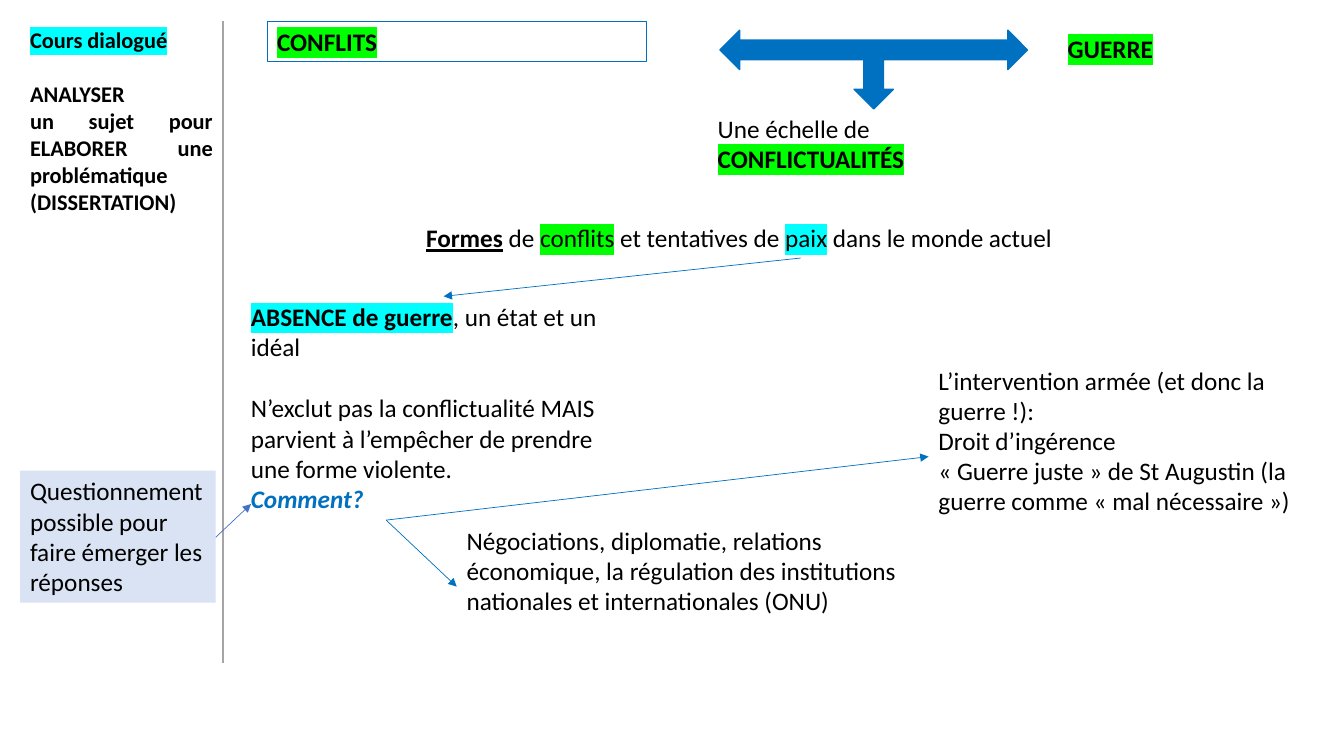
from lxml import etree
from pptx import Presentation
from pptx.dml.color import RGBColor
from pptx.enum.shapes import MSO_CONNECTOR, MSO_SHAPE
from pptx.enum.text import MSO_ANCHOR, PP_ALIGN as ALIGN
from pptx.oxml.ns import qn
from pptx.util import Emu, Pt

PX = 9144  # 100 px to the inch
COLORS = {
    "black": "000000", "blue": "0070C0", "royal": "4472C4", "gray": "A5A5A5",
    "pale": "DAE3F3", "green": "00FF00", "cyan": "00FFFF",
}


def px(*lengths):
    return [Emu(n * PX) for n in lengths]


def rgb(name):
    return RGBColor.from_string(COLORS[name])


def add_run(p, text, size=18, color="black", bold=False, italic=False,
            underline=False, mark=None):
    """Add a run; mark names its highlight colour."""
    r = p.add_run()
    r.text = text
    font = r.font
    font.size, font.bold, font.italic = Pt(size), bold, italic
    font.underline = underline
    font.color.rgb = rgb(color)
    if mark:
        highlight = etree.SubElement(r._r.get_or_add_rPr(), qn("a:highlight"))
        etree.SubElement(highlight, qn("a:srgbClr"), val=COLORS[mark])
    font.name = "Calibri"


def add_text(s, box, paragraphs, align=ALIGN.LEFT, fill=None, line=None,
             gaps=None, **base):
    """Write paragraphs of (text, format) runs; gaps maps index to space before."""
    if fill or line:
        sp = add_shape(s, MSO_SHAPE.RECTANGLE, box, fill, line, 0.75)
    else:
        sp = s.shapes.add_textbox(*px(*box))
    tf = sp.text_frame
    tf.word_wrap = True
    tf.vertical_anchor = MSO_ANCHOR.TOP
    for i, runs in enumerate(paragraphs):
        p = tf.paragraphs[0] if i == 0 else tf.add_paragraph()
        p.alignment = align
        if gaps and i in gaps:
            p.space_before = Pt(gaps[i])
        for text, style in runs:
            add_run(p, text, **{**base, **style})


def add_shape(s, kind, box, fill=None, line=None, width=1):
    sp = s.shapes.add_shape(kind, *px(*box))
    sp.shadow.inherit = False
    if fill:
        sp.fill.solid()
        sp.fill.fore_color.rgb = rgb(fill)
    else:
        sp.fill.background()
    if line:
        sp.line.color.rgb = rgb(line)
        sp.line.width = Pt(width)
    else:
        sp.line.fill.background()
    return sp


def add_line(s, start, end, color="blue", width=0.5, arrow=True):
    line = s.shapes.add_connector(MSO_CONNECTOR.STRAIGHT, *px(*start, *end))
    line.line.color.rgb = rgb(color)
    line.line.width = Pt(width)
    sp_pr = line._element.spPr
    if arrow:
        etree.SubElement(sp_pr.find(qn("a:ln")), qn("a:tailEnd"), type="triangle")
    etree.SubElement(sp_pr, qn("a:effectLst"))


def add_sidebar(s, x, y, w, h):
    add_text(s, (x, y, w, 199), [
        [("Cours dialogué", {"mark": "cyan"})],
        [("ANALYSER", {})],
        [("un sujet pour ELABORER une problématique", {})],
        [("(DISSERTATION)", {})],
    ], align=ALIGN.JUSTIFY, gaps={1: 19.5}, size=16, bold=True)
    add_line(s, (x + w, y), (x + w, y + h), "gray", 1, arrow=False)
    add_text(s, (x, y + 446, 194, 131), [
        [("Questionnement possible pour faire émerger les réponses", {})],
    ], fill="pale")
    add_line(s, (x + 194, y + 512), (x + 229, y + 479), "royal")


def add_conflict_scale(s, x, y, w):
    """Conflict on the left, war on the right, the scale between them."""
    key = {"bold": True, "mark": "green"}
    add_text(s, (x, y, 376, 40), [[("CONFLITS", key)]], line="blue")
    add_text(s, (x + w - 182, y + 7, 182, 40), [[("GUERRE", key)]])
    arrow = add_shape(s, MSO_SHAPE.LEFT_RIGHT_UP_ARROW,
                      (x + 449, y + 9, 305, 78), "blue", "blue")
    arrow.rotation = 180
    add_text(s, (x + 437, y + 86, 258, 71), [
        [("Une échelle de ", {}), ("CONFLICTUALITÉS", key)],
    ])


def add_peace_map(s, x, y):
    """The subject, the meaning of peace, and the two ways to reach it."""
    add_text(s, (x + 104, y, 780, 40), [[
        ("Formes", {"bold": True, "underline": True}),
        (" de ", {}),
        ("conflits", {"mark": "green"}),
        (" et tentatives de ", {}),
        ("paix", {"mark": "cyan"}),
        (" dans le monde actuel", {}),
    ]], align=ALIGN.CENTER)
    add_text(s, (x, y + 78, 402, 222), [
        [("ABSENCE de guerre", {"bold": True, "mark": "cyan"}),
         (", un état et un idéal", {})],
        [("N’exclut pas la conflictualité MAIS parvient à l’empêcher de "
          "prendre une forme violente.", {})],
        [("Comment?", {"color": "blue", "bold": True, "italic": True})],
    ], gaps={1: 22})
    add_text(s, (x + 214, y + 300, 461, 131), [
        [("Négociations, diplomatie, relations économique, la régulation des "
          "institutions nationales et internationales (ONU)", {})],
    ])
    add_text(s, (x + 682, y + 141, 373, 192), [
        [("L’intervention armée (et donc la guerre !):", {})],
        [("Droit d’ingérence", {})],
        [("« Guerre juste » de St Augustin (la guerre comme "
          "« mal nécessaire »)", {})],
    ])
    how = (x + 144, y + 300)
    for start, end in (
        (how, (x + 214, y + 366)),
        (how, (x + 682, y + 237)),
        ((x + 555, y + 40), (x + 201, y + 78)),
    ):
        add_line(s, start, end)


def main():
    prs = Presentation()
    prs.slide_width, prs.slide_height = px(1333, 750)
    s = prs.slides.add_slide(prs.slide_layouts[6])
    add_sidebar(s, 20, 21, 201, 637)
    add_conflict_scale(s, 265, 21, 966)
    add_peace_map(s, 239, 216)
    prs.save("out.pptx")


if __name__ == "__main__":
    main()
